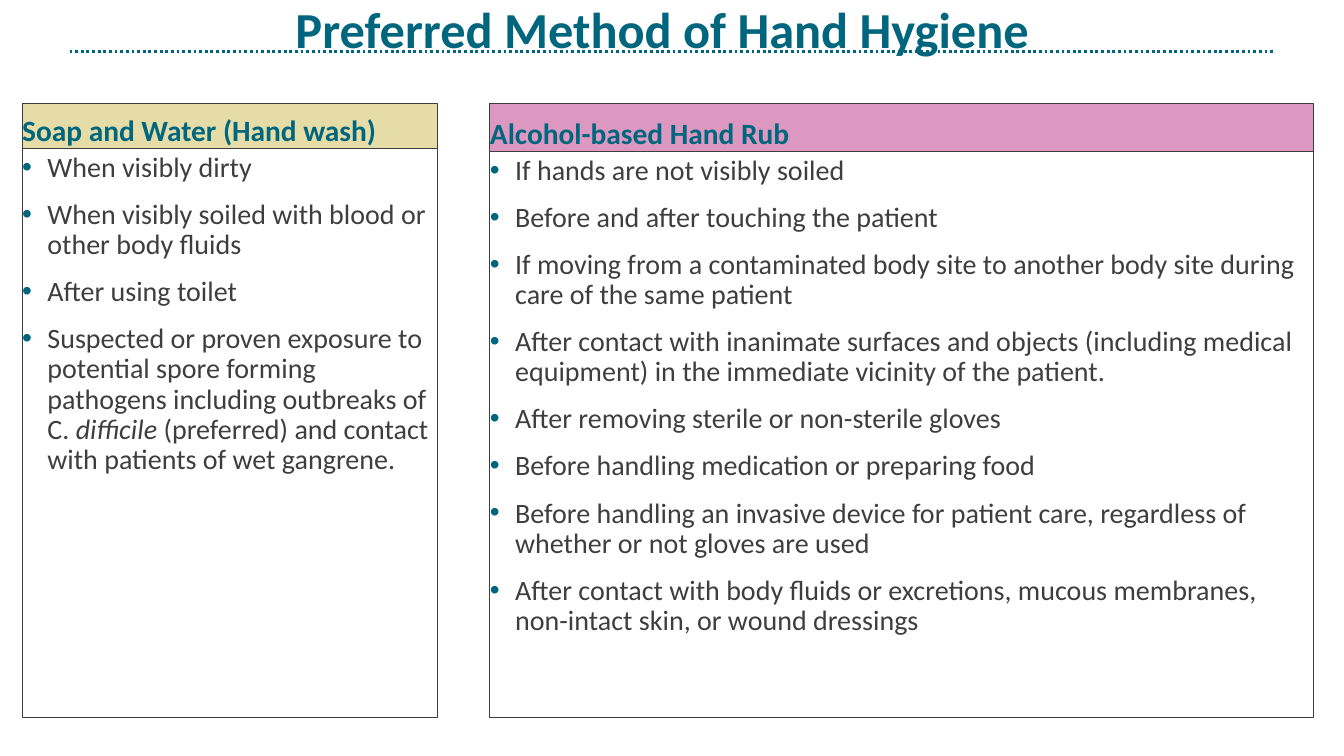
"""Build the hand hygiene slide with two titled bullet panels."""
from dataclasses import dataclass

import pptx
import pptx.dml.color
import pptx.enum.dml
import pptx.enum.shapes
import pptx.enum.text
import pptx.util
from lxml import etree
from pptx.oxml.ns import qn

Inches = pptx.util.Inches
Pt = pptx.util.Pt
ANCHOR = pptx.enum.text.MSO_ANCHOR
ALIGN = pptx.enum.text.PP_ALIGN
TEAL = "00667D"
GREY = "3F3E3E"
PANEL_TOP = 1.03


@dataclass
class Panel:
    left: float
    width: float
    header_height: float
    bottom: float
    fill: str
    heading: str
    items: list[str]


PANELS = [
    Panel(0.22, 4.12, 0.44, 7.12, "E6DCA7", "Soap and Water (Hand wash)", [
        "When visibly dirty",
        "When visibly soiled with blood or other body fluids",
        "After using toilet",
        "Suspected or proven exposure to potential spore forming pathogens including "
        "outbreaks of C. *difficile *(preferred) and contact with patients of wet gangrene.",
    ]),
    Panel(4.86, 8.17, 0.47, 7.12, "DC98C1", "Alcohol-based Hand Rub", [
        "If hands are not visibly soiled",
        "Before and after touching the patient",
        "If moving from a contaminated body site to another body site during care of "
        "the same patient",
        "After contact with inanimate surfaces and objects (including medical equipment) "
        "in the immediate vicinity of the patient.",
        "After removing sterile or non-sterile gloves",
        "Before handling medication or preparing food",
        "Before handling an invasive device for patient care, regardless of whether or "
        "not gloves are used",
        "After contact with body fluids or excretions, mucous membranes, non-intact skin, "
        "or wound dressings",
    ]),
]


def rgb(color: str) -> pptx.dml.color.RGBColor:
    """Turn a hex string into a colour."""
    return pptx.dml.color.RGBColor.from_string(color)


def add_bullet(p) -> None:
    """Give a paragraph a hanging teal bullet."""
    pPr = p._p.get_or_add_pPr()
    pPr.set("marL", str(Inches(0.25)))
    pPr.set("indent", str(-Inches(0.25)))
    clr = etree.SubElement(pPr, qn("a:buClr"))
    etree.SubElement(clr, qn("a:srgbClr"), val=TEAL)
    etree.SubElement(pPr, qn("a:buFont"), typeface="Arial")
    etree.SubElement(pPr, qn("a:buChar"), char="•")


def write(sp, lines: list[str], *, size: float, color: str, bold: bool = False,
          align=ALIGN.LEFT, anchor=ANCHOR.TOP, bottom: float = 0.05,
          bullets: bool = False) -> None:
    """Fill a shape with paragraphs, setting text between asterisks in italics."""
    tf = sp.text_frame
    tf.word_wrap = True
    tf.vertical_anchor = anchor
    tf.margin_left = tf.margin_right = 0
    tf.margin_top, tf.margin_bottom = Inches(0.05), Inches(bottom)
    for i, line in enumerate(lines):
        p = tf.add_paragraph() if i else tf.paragraphs[0]
        if bullets:
            add_bullet(p)
        p.alignment = align
        p.line_spacing = 0.9
        if i:
            p.space_before = Pt(12)
        for j, part in enumerate(line.split("*")):
            r = p.add_run()
            r.text = part
            r.font.name = "Calibri"
            r.font.size = Pt(size)
            r.font.bold = bold
            r.font.italic = j % 2 == 1
            r.font.color.rgb = rgb(color)


def add_box(s, left: float, top: float, width: float, height: float,
            fill: str | None = None):
    """Add an outlined rectangle, filled if a colour is given."""
    sp = s.shapes.add_shape(pptx.enum.shapes.MSO_SHAPE.RECTANGLE, Inches(left),
                            Inches(top), Inches(width), Inches(height))
    sp.shadow.inherit = False
    if fill:
        sp.fill.solid()
        sp.fill.fore_color.rgb = rgb(fill)
    else:
        sp.fill.background()
    sp.line.color.rgb = rgb(GREY)
    sp.line.width = Pt(0.75)
    return sp


def add_rule(s) -> None:
    """Draw the dotted rule behind the title."""
    y = Inches(0.51)
    cx = s.shapes.add_connector(pptx.enum.shapes.MSO_CONNECTOR.STRAIGHT,
                                Inches(0.69), y, Inches(12.64), y)
    cx.line.color.rgb = rgb(TEAL)
    cx.line.width = Pt(2)
    cx.line.dash_style = pptx.enum.dml.MSO_LINE.ROUND_DOT
    etree.SubElement(cx._element.spPr, qn("a:effectLst"))


def add_panel(s, panel: Panel) -> None:
    """Add a coloured heading with its bullet box below."""
    header = add_box(s, panel.left, PANEL_TOP, panel.width, panel.header_height, panel.fill)
    write(header, [panel.heading], size=21, color=TEAL, bold=True,
          anchor=ANCHOR.BOTTOM, bottom=0)
    top = PANEL_TOP + panel.header_height
    body = add_box(s, panel.left, top, panel.width, panel.bottom - top)
    write(body, panel.items, size=20, color=GREY, bullets=True)


def main() -> None:
    """Build and save the slide."""
    prs = pptx.Presentation()
    prs.slide_width, prs.slide_height = Inches(13.33), Inches(7.5)
    s = prs.slides.add_slide(prs.slide_layouts[6])
    add_rule(s)
    title = s.shapes.add_textbox(Inches(0.82), 0, Inches(11.5), Inches(0.71))
    write(title, ["Preferred Method of Hand Hygiene"], size=36, color=TEAL, bold=True,
          align=ALIGN.CENTER)
    for panel in PANELS:
        add_panel(s, panel)
    prs.save("out.pptx")


if __name__ == "__main__":
    main()
